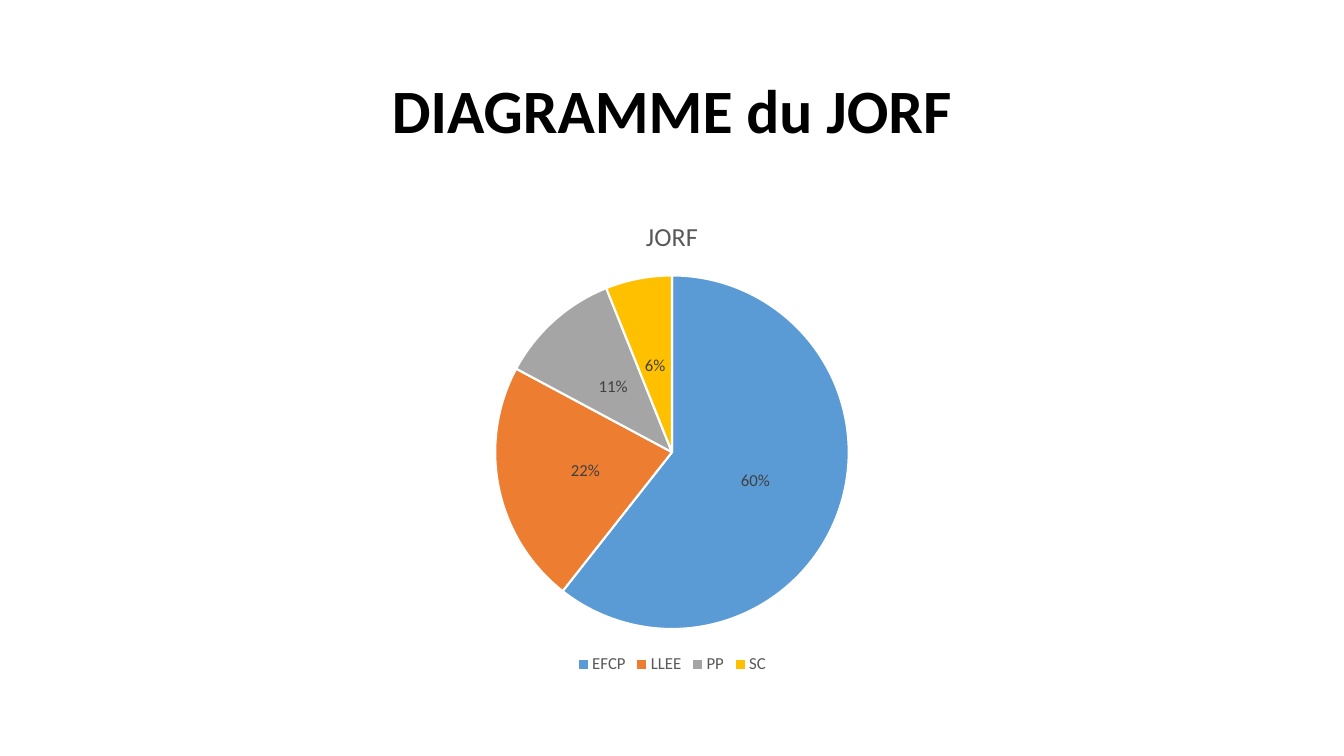
"""Build the JORF pie chart slide."""
from dataclasses import dataclass

from pptx import Presentation
from pptx.chart.data import CategoryChartData
from pptx.dml.color import RGBColor
from pptx.enum import chart as ch, text
from pptx.util import Cm, Pt

FONT = "Calibri"
LEFT, WIDTH = Cm(2.33), Cm(29.21)


@dataclass(frozen=True)
class Share:
    category: str
    percent: int
    colour: str


SHARES = [
    Share("EFCP", 60, "5B9BD5"),
    Share("LLEE", 22, "ED7D31"),
    Share("PP", 11, "A5A5A5"),
    Share("SC", 6, "FFC000"),
]


def rgb(colour: str) -> RGBColor:
    return RGBColor.from_string(colour)


def style(font, size: float, colour: str, bold: bool = False) -> None:
    font.name, font.size, font.bold = FONT, Pt(size), bold
    font.color.rgb = rgb(colour)


def add_heading(slide, wording: str) -> None:
    heading = slide.shapes.title
    heading.left, heading.top = LEFT, Cm(1.01)
    heading.width, heading.height = WIDTH, Cm(3.68)
    heading.text_frame.text = wording
    heading.text_frame.vertical_anchor = text.MSO_ANCHOR.MIDDLE
    paragraph = heading.text_frame.paragraphs[0]
    paragraph.alignment = text.PP_ALIGN.CENTER
    paragraph.line_spacing = 0.9
    style(paragraph.font, 44, "000000", bold=True)


def colour_slice(pie_slice, colour: str) -> None:
    pie_slice.format.fill.solid()
    pie_slice.format.fill.fore_color.rgb = rgb(colour)
    pie_slice.format.line.color.rgb = rgb("FFFFFF")
    pie_slice.format.line.width = Pt(1.5)


def add_pie(slide, name: str, shares: list[Share]) -> None:
    data = CategoryChartData()
    data.categories = [share.category for share in shares]
    data.add_series(name, [share.percent for share in shares])
    pie = slide.shapes.add_chart(
        ch.XL_CHART_TYPE.PIE, LEFT, Cm(5), WIDTH, Cm(12.09), data
    ).chart
    style(pie.font, 10, "000000")

    pie.has_title = True
    pie.chart_title.include_in_layout = False
    pie.chart_title.text_frame.text = name
    style(pie.chart_title.text_frame.paragraphs[0].font, 18.6, "595959")

    pie.has_legend = True
    pie.legend.position = ch.XL_LEGEND_POSITION.BOTTOM
    pie.legend.include_in_layout = False
    style(pie.legend.font, 12, "595959")

    plot = pie.plots[0]
    plot.vary_by_categories = True
    for index, share in enumerate(shares):
        colour_slice(plot.series[0].points[index], share.colour)

    labels = plot.series[0].data_labels
    labels.show_value, labels.show_percentage = True, False
    labels.number_format, labels.number_format_is_linked = '0"%"', False
    labels.position = ch.XL_LABEL_POSITION.CENTER
    style(labels.font, 12, "404040")


def main() -> None:
    deck = Presentation()
    deck.slide_width, deck.slide_height = Cm(33.87), Cm(19.05)
    slide = deck.slides.add_slide(deck.slide_layouts.get_by_name("Title Only"))
    slide.background.fill.solid()
    slide.background.fill.fore_color.rgb = rgb("FFFFFF")
    add_heading(slide, "DIAGRAMME du JORF")
    add_pie(slide, "JORF", SHARES)
    deck.save("out.pptx")


if __name__ == "__main__":
    main()
